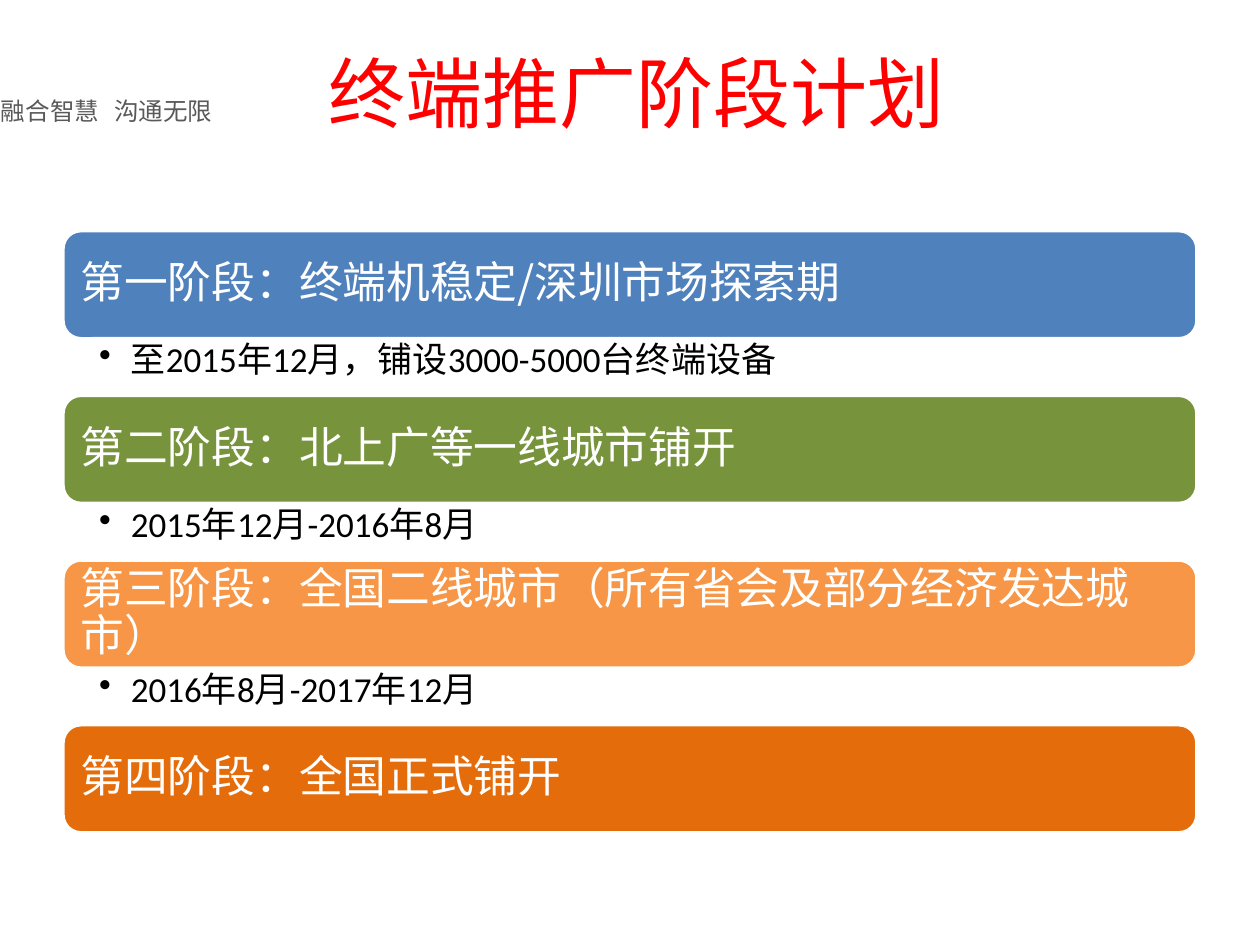
from dataclasses import dataclass

from lxml import etree
from pptx import Presentation
from pptx import util as u
from pptx.dml.color import RGBColor
from pptx.enum import shapes, text
from pptx.oxml import ns

Cm, Pt = u.Cm, u.Pt


@dataclass(frozen=True)
class Theme:
    title: str = "FF0000"
    tagline: str = "595959"
    body: str = "000000"
    white: str = "FFFFFF"
    stages: tuple = ("4F81BD", "77933C", "F79646", "E46C0A")
    cjk: str = "Noto Sans CJK SC"
    cjk_tag: str = "Noto Sans CJK JP"
    latin: str = "Calibri"
    title_size: int = 44
    stage_size: int = 25
    detail_size: int = 20
    tag_size: int = 14


T = Theme()

STAGES = [
    ("第一阶段：终端机稳定/深圳市场探索期", "至2015年12月，铺设3000-5000台终端设备"),
    ("第二阶段：北上广等一线城市铺开", "2015年12月-2016年8月"),
    ("第三阶段：全国二线城市（所有省会及部分经济发达城市）", "2016年8月-2017年12月"),
    ("第四阶段：全国正式铺开", None),
]


def write(sp, content, size, color, latin=T.cjk, cjk=T.cjk, align=text.PP_ALIGN.LEFT,
          anchor=text.MSO_ANCHOR.TOP, insets=(0.25, 0.13, 0.25, 0.13),
          line=None, after=None, bullet=None, tab=None):
    """Write one paragraph; insets, bullet indent and tab stop are in cm."""
    tf = sp.text_frame
    tf.word_wrap = True
    tf.vertical_anchor = anchor
    tf.margin_left, tf.margin_top, tf.margin_right, tf.margin_bottom = map(Cm, insets)
    p = tf.paragraphs[0]
    p.alignment = align
    if line:
        p.line_spacing = line
    if after:
        p.space_after = Pt(after)
    pPr = p._p.get_or_add_pPr()
    if bullet:
        pPr.set("marL", str(Cm(bullet)))
        pPr.set("indent", str(-Cm(bullet)))
        etree.SubElement(pPr, ns.qn("a:buChar"), char="•")
    if tab:
        tabs = etree.SubElement(pPr, ns.qn("a:tabLst"))
        etree.SubElement(tabs, ns.qn("a:tab"), pos=str(Cm(tab)), algn="l")
    r = p.add_run()
    r.text = content
    r.font.size = Pt(size)
    r.font.color.rgb = RGBColor.from_string(color)
    r.font.name = latin
    etree.SubElement(r._r.get_or_add_rPr(), ns.qn("a:ea"), typeface=cjk)


def add_text(s, box, content, **fmt):
    write(s.shapes.add_textbox(*map(Cm, box)), content, **fmt)


def add_header(s, x, y, w, h):
    # Tagline at the slide edge, then the centred title
    add_text(s, (x - 1.63, y + 1.02, 5.36, 0.86), "融合智慧\t沟通无限", size=T.tag_size,
             color=T.tagline, latin=T.cjk_tag, cjk=T.cjk_tag, tab=2.28)
    add_text(s, (x, y, w, h), "终端推广阶段计划", size=T.title_size, color=T.title,
             align=text.PP_ALIGN.CENTER)


def add_stages(s, x, y, w, bar_h=2.18, detail_h=1.14):
    for i, ((heading, detail), color) in enumerate(zip(STAGES, T.stages)):
        top = y + i * (bar_h + detail_h)
        # Stage bar
        sp = s.shapes.add_shape(shapes.MSO_SHAPE.ROUNDED_RECTANGLE,
                                Cm(x), Cm(top), Cm(w), Cm(bar_h))
        sp.shadow.inherit = False
        sp.fill.solid()
        sp.fill.fore_color.rgb = RGBColor.from_string(color)
        sp.line.color.rgb = RGBColor.from_string(T.white)
        sp.line.width = Pt(2)
        write(sp, heading, size=T.stage_size, color=T.white, anchor=text.MSO_ANCHOR.MIDDLE,
              insets=(0.25,) * 4, line=0.9, after=8.75)
        # Dates below the bar
        if detail:
            add_text(s, (x, top + bar_h, w, detail_h), detail, size=T.detail_size,
                     color=T.body, latin=T.latin, insets=(0.73, 0.08, 0.48, 0.08),
                     line=0.9, after=4, bullet=0.64)


def main():
    prs = Presentation()
    prs.slide_width, prs.slide_height = Cm(25.4), Cm(19.05)
    s = prs.slides.add_slide(prs.slide_layouts[6])
    add_header(s, 1.4, 0.79, 22.86, 3.18)
    add_stages(s, 1.27, 4.65, 22.86)
    prs.save("out.pptx")


if __name__ == "__main__":
    main()
